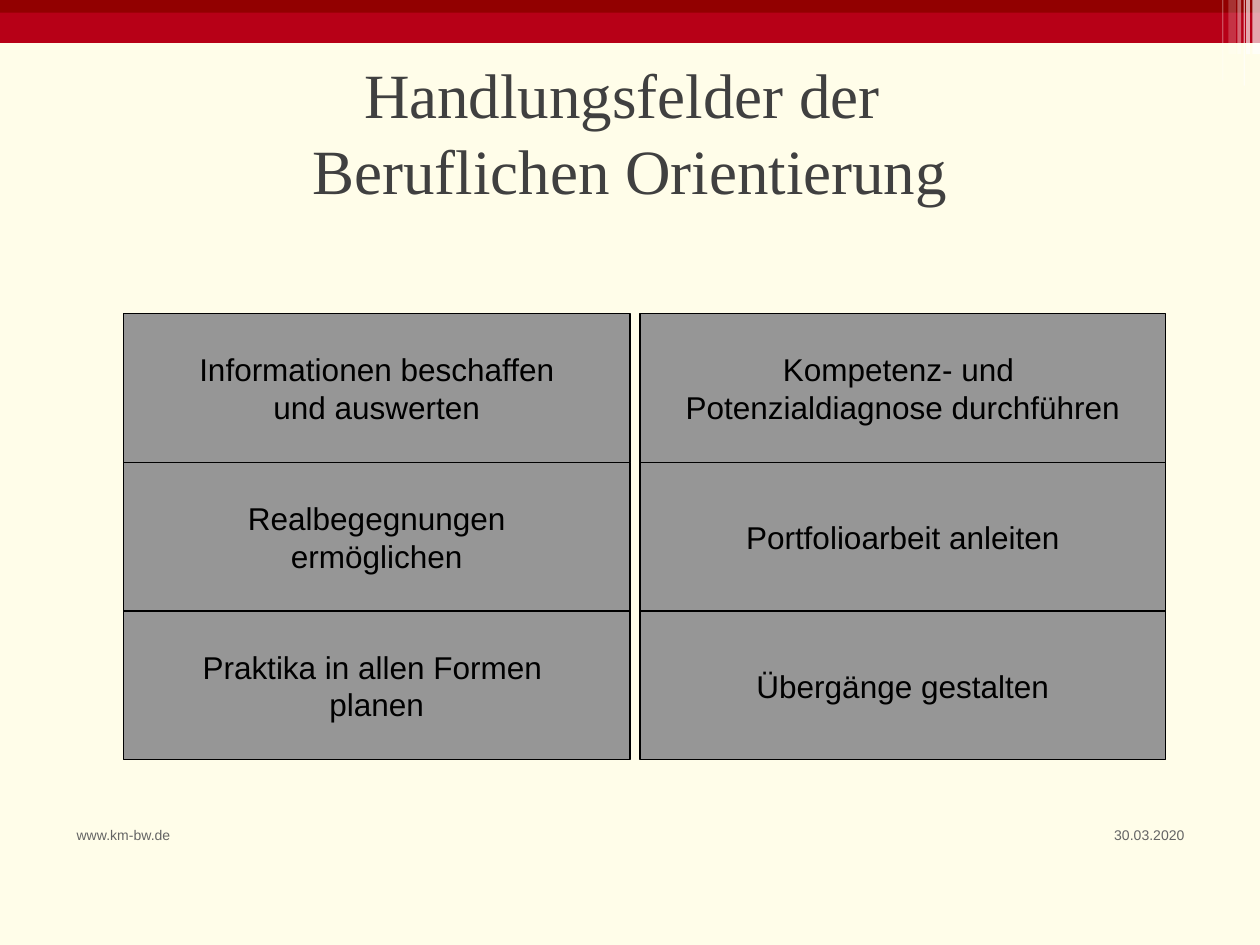
from dataclasses import dataclass

from lxml.etree import SubElement
from pptx import Presentation
from pptx.dml.color import RGBColor
from pptx.enum.shapes import MSO_SHAPE as Shape
from pptx.enum.text import MSO_ANCHOR as Anchor, PP_ALIGN as Align
from pptx.oxml.ns import qn
from pptx.util import Inches, Pt

COLORS = {
    "paper": "FFFDE9",
    "red": "B70017",
    "dark_red": "920000",
    "white": "FFFFFF",
    "footer": "646464",
    "title": "404040",
    "field": "969696",
    "black": "000000",
}
SLIDE_WIDTH, SLIDE_HEIGHT = Inches(10), Inches(7.5)


@dataclass(frozen=True)
class Area:
    """Position and size in percent of the slide."""
    left: float
    top: float
    width: float
    height: float

    def lengths(self) -> tuple[int, int, int, int]:
        return (
            round(SLIDE_WIDTH * self.left / 100),
            round(SLIDE_HEIGHT * self.top / 100),
            round(SLIDE_WIDTH * self.width / 100),
            round(SLIDE_HEIGHT * self.height / 100),
        )


@dataclass(frozen=True)
class Style:
    font: str
    size: int
    color: str
    align: Align


@dataclass(frozen=True)
class Band:
    area: Area
    color: str
    opacity: int = 100


@dataclass(frozen=True)
class Column:
    left: float
    width: float
    fields: tuple[tuple[str, ...], ...]


@dataclass(frozen=True)
class Footer:
    text: str
    area: Area
    align: Align


def stripe(left: float, width: float, height: float, opacity: int) -> Band:
    return Band(Area(left, 0, width, height), "white", opacity)


BANDS = (
    Band(Area(0, 0, 100, 4.53), "red"),
    Band(Area(0, 0, 100, 1.33), "dark_red"),
    stripe(98.9, 0.3, 5.73, 65),
    stripe(99.4, 0.6, 5.73, 65),
    stripe(97, 0.1, 8.53, 30),
    stripe(98.7, 0.1, 9.07, 60),
    stripe(97.5, 0.6, 5.73, 20),
    stripe(98.2, 0.3, 5.73, 40),
)
FOOTERS = (
    Footer("30.03.2020", Area(85.2, 86.8, 9.8, 5.2), Align.RIGHT),
    Footer("www.km-bw.de", Area(5.1, 86.8, 29.5, 5.2), Align.LEFT),
)
TITLE_AREA = Area(7.5, 13.2, 85, 8.67)
TITLE_LINES = ("Handlungsfelder der ", "Beruflichen Orientierung")
TITLE_STYLE = Style("Times New Roman", 36, "title", Align.CENTER)
FIELD_STYLE = Style("Arial", 18, "black", Align.CENTER)
FIELDS_TOP, ROW_HEIGHT = 33.2, 15.73
COLUMNS = (
    Column(9.8, 40.2, (
        ("Informationen beschaffen", "und auswerten"),
        ("Realbegegnungen", "ermöglichen"),
        ("Praktika in allen Formen ", "planen"),
    )),
    Column(50.8, 41.7, (
        ("Kompetenz- und ", "Potenzialdiagnose durchführen"),
        ("Portfolioarbeit anleiten",),
        ("Übergänge gestalten",),
    )),
)


def rgb(name: str) -> RGBColor:
    return RGBColor.from_string(COLORS[name])


def add_span(para, text: str, style: Style) -> None:
    span = para.add_run()
    span.text = text
    span.font.name = style.font
    span.font.size = Pt(style.size)
    span.font.color.rgb = rgb(style.color)


def add_box(slide, area: Area, color: str):
    box = slide.shapes.add_shape(Shape.RECTANGLE, *area.lengths())
    box.shadow.inherit = False
    box.fill.solid()
    box.fill.fore_color.rgb = rgb(color)
    box.line.fill.background()
    return box


def draw_band(slide, band: Band) -> None:
    box = add_box(slide, band.area, band.color)
    if band.opacity < 100:
        color = box.fill._xPr.find(qn("a:solidFill"))[0]
        SubElement(color, qn("a:alpha")).set("val", str(band.opacity * 1000))


def draw_field(slide, area: Area, lines: tuple[str, ...]) -> None:
    box = add_box(slide, area, "field")
    box.line.color.rgb = rgb("black")
    box.line.width = Pt(0.75)
    frame = box.text_frame
    frame.word_wrap = False
    frame.vertical_anchor = Anchor.MIDDLE
    for index, line in enumerate(lines):
        para = frame.add_paragraph() if index else frame.paragraphs[0]
        para.alignment = FIELD_STYLE.align
        add_span(para, line, FIELD_STYLE)


def draw_footer(slide, footer: Footer) -> None:
    frame = slide.shapes.add_textbox(*footer.area.lengths()).text_frame
    frame.word_wrap = True
    para = frame.paragraphs[0]
    para.alignment = footer.align
    add_span(para, footer.text, Style("Arial", 8, "footer", footer.align))


def draw_title(slide) -> None:
    frame = slide.shapes.add_textbox(*TITLE_AREA.lengths()).text_frame
    frame.word_wrap = True
    frame.vertical_anchor = Anchor.BOTTOM
    frame.margin_left = frame.margin_right = 0
    frame.margin_top = frame.margin_bottom = 0
    para = frame.paragraphs[0]
    para.alignment = TITLE_STYLE.align
    for index, line in enumerate(TITLE_LINES):
        if index:
            para.add_line_break()
        add_span(para, line, TITLE_STYLE)


def main() -> None:
    deck = Presentation()
    deck.slide_width, deck.slide_height = SLIDE_WIDTH, SLIDE_HEIGHT
    slide = deck.slides.add_slide(deck.slide_layouts[6])
    slide.background.fill.solid()
    slide.background.fill.fore_color.rgb = rgb("paper")
    for band in BANDS:
        draw_band(slide, band)
    for footer in FOOTERS:
        draw_footer(slide, footer)
    draw_title(slide)
    for column in COLUMNS:
        for row, lines in enumerate(column.fields):
            top = FIELDS_TOP + row * ROW_HEIGHT
            draw_field(slide, Area(column.left, top, column.width, ROW_HEIGHT), lines)
    deck.save("out.pptx")


if __name__ == "__main__":
    main()
